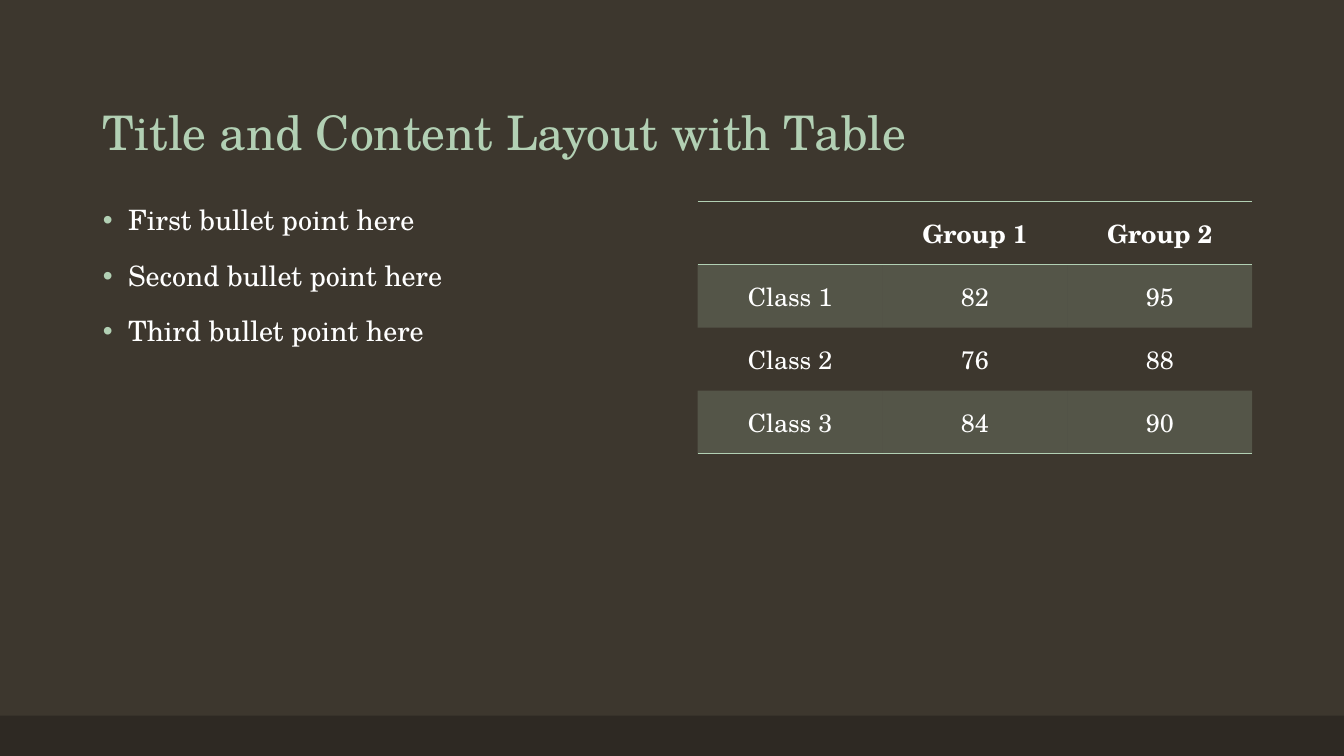
"""Build a slide with a title, a bullet list and a banded score table."""
from dataclasses import dataclass

from lxml.etree import SubElement
from pptx import Presentation
from pptx.dml.color import RGBColor
from pptx.enum.shapes import MSO_SHAPE as Shape
from pptx.enum.text import MSO_ANCHOR as Anchor, MSO_AUTO_SIZE as AutoSize, PP_ALIGN as Align
from pptx.oxml.ns import qn
from pptx.util import Inches, Pt

FONT = "TeX Gyre Schola"
BROWN, DARK, GREEN, WHITE = "3D372E", "2E2923", "B2D0B4", "FFFFFF"
PLAIN_TABLE = "{2D5ABB26-0587-4C30-8999-92F81FD0307C}"


@dataclass(frozen=True)
class Area:
    left: float
    top: float
    width: float
    height: float

    def lengths(self) -> tuple:
        return tuple(Inches(n) for n in (self.left, self.top, self.width, self.height))


@dataclass(frozen=True)
class Style:
    size: float
    color: str
    bold: bool = False


@dataclass(frozen=True)
class Row:
    texts: tuple[str, ...]
    bold: bool = False
    banded: bool = False
    lines: tuple[str, ...] = ()


BAND = Area(0, 7.1, 13.33, 0.4)
TITLE = Area(0.92, 0.4, 11.5, 1.25)
LIST = Area(0.92, 2, 5.5, 4.76)
TABLE = Area(6.92, 2, 5.5, 2.5)
BULLETS = ("First bullet point here", "Second bullet point here", "Third bullet point here")
ROWS = (
    Row(("", "Group 1", "Group 2"), bold=True, lines=("lnT", "lnB")),
    Row(("Class 1", "82", "95"), banded=True),
    Row(("Class 2", "76", "88")),
    Row(("Class 3", "84", "90"), banded=True, lines=("lnB",)),
)


def paint(fill, color: str) -> None:
    fill.solid()
    fill.fore_color.rgb = RGBColor.from_string(color)


def write(para, text: str, style: Style) -> None:
    span = para.add_run()
    span.text = text
    span.font.name = FONT
    span.font.size = Pt(style.size)
    span.font.bold = style.bold
    paint(span.font.fill, style.color)


def place(box, area: Area, anchor: Anchor):
    box.left, box.top, box.width, box.height = area.lengths()
    frame = box.text_frame
    frame.word_wrap = True
    frame.auto_size = AutoSize.NONE
    frame.vertical_anchor = anchor
    return frame


def add_bullet(para) -> None:
    props = para._p.get_or_add_pPr()
    props.set("marL", str(Inches(0.25)))
    props.set("indent", str(-Inches(0.25)))
    color = SubElement(props, qn("a:buClr"))
    SubElement(color, qn("a:srgbClr"), val=GREEN)
    SubElement(props, qn("a:buFont"), typeface="Arial")
    SubElement(props, qn("a:buChar"), char="•")


def add_title(page) -> None:
    para = place(page.shapes.title, TITLE, Anchor.BOTTOM).paragraphs[0]
    para.alignment = Align.LEFT
    para.line_spacing = 0.9
    write(para, "Title and Content Layout with Table", Style(34, GREEN))


def add_list(page) -> None:
    frame = place(page.placeholders[1], LIST, Anchor.TOP)
    for index, text in enumerate(BULLETS):
        para = frame.add_paragraph() if index else frame.paragraphs[0]
        para.line_spacing = 0.9
        para.space_before = Pt(18)
        add_bullet(para)
        write(para, text, Style(20, WHITE))


def format_cell(cell, row: Row, text: str) -> None:
    cell.vertical_anchor = Anchor.MIDDLE
    props = cell._tc.get_or_add_tcPr()
    for side in row.lines:
        line = SubElement(props, qn(f"a:{side}"), w=str(Pt(1)))
        color = SubElement(line, qn("a:solidFill"))
        SubElement(color, qn("a:srgbClr"), val=GREEN)
    if row.banded:
        paint(cell.fill, GREEN)
        tint = props.find(qn("a:solidFill")).find(qn("a:srgbClr"))
        SubElement(tint, qn("a:alpha"), val="20000")
    else:
        cell.fill.background()
    para = cell.text_frame.paragraphs[0]
    para.alignment = Align.CENTER
    if text:
        write(para, text, Style(18, WHITE, row.bold))


def add_scores(page) -> None:
    table = page.shapes.add_table(len(ROWS), len(ROWS[0].texts), *TABLE.lengths()).table
    table._tbl.tblPr.find(qn("a:tableStyleId")).text = PLAIN_TABLE
    for line, row in zip(table.rows, ROWS):
        for cell, text in zip(line.cells, row.texts):
            format_cell(cell, row, text)


def add_band(page) -> None:
    band = page.shapes.add_shape(Shape.RECTANGLE, *BAND.lengths())
    band.shadow.inherit = False
    paint(band.fill, DARK)
    band.line.fill.background()


def main() -> None:
    deck = Presentation()
    deck.slide_width, deck.slide_height = Inches(13.33), Inches(7.5)
    page = deck.slides.add_slide(deck.slide_layouts[1])
    paint(page.background.fill, BROWN)
    add_band(page)
    add_title(page)
    add_list(page)
    add_scores(page)
    deck.save("out.pptx")


if __name__ == "__main__":
    main()
